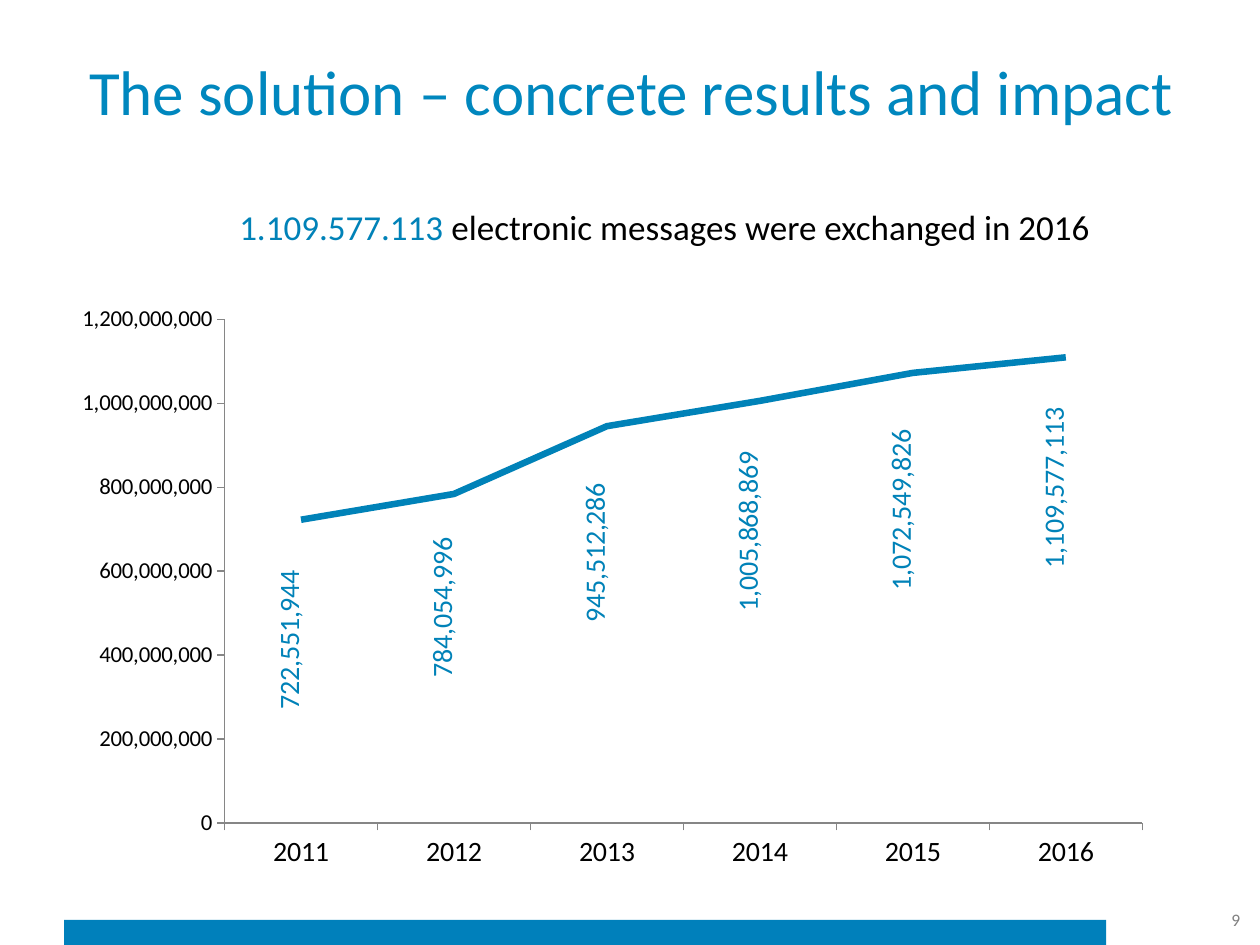
from lxml import etree
from pptx import Presentation
from pptx.chart.data import CategoryChartData
from pptx.dml.color import RGBColor
from pptx.enum.chart import XL_CHART_TYPE, XL_LABEL_POSITION, XL_TICK_MARK
from pptx.enum.shapes import MSO_SHAPE
from pptx.enum.text import MSO_ANCHOR, PP_ALIGN
from pptx.oxml import parse_xml
from pptx.oxml.ns import nsdecls, qn
from pptx.util import Inches, Pt

FONT = "Calibri"
BAR_BLUE = RGBColor(0x00, 0x80, 0xBB)
TITLE_BLUE = RGBColor(0x00, 0x87, 0xBE)
BLUE = RGBColor(0x00, 0x82, 0xB8)
BLACK = RGBColor(0x00, 0x00, 0x00)
GRAY = RGBColor(0x80, 0x80, 0x80)
AXIS_GRAY = RGBColor(0x86, 0x86, 0x86)
LINE_STACKED = XL_CHART_TYPE.LINE_STACKED
BELOW = XL_LABEL_POSITION.BELOW
OUTSIDE = XL_TICK_MARK.OUTSIDE
NO_TICK = XL_TICK_MARK.NONE
RECTANGLE = MSO_SHAPE.RECTANGLE
MIDDLE = MSO_ANCHOR.MIDDLE
CENTER = PP_ALIGN.CENTER
RIGHT = PP_ALIGN.RIGHT

MESSAGES = {
    "2011": 722551944,
    "2012": 784054996,
    "2013": 945512286,
    "2014": 1005868869,
    "2015": 1072549826,
    "2016": 1109577113,
}
LABEL_DROPS = [0.07, 0.06, 0.08, 0.07, 0.08, 0.07]


def set_font(font, size, color):
    font.name = FONT
    font.size = Pt(size)
    font.color.rgb = color


def manual_layout(**settings):
    layout = parse_xml(f"<c:layout {nsdecls('c')}><c:manualLayout/></c:layout>")
    for name, value in settings.items():
        etree.SubElement(layout[0], qn(f"c:{name}")).set("val", str(value))
    return layout


presentation = Presentation()
presentation.slide_width = Inches(10)
presentation.slide_height = Inches(7.5)
slide = presentation.slides.add_slide(presentation.slide_layouts[5])

bar = slide.shapes.add_shape(
    RECTANGLE, Inches(0.51), Inches(7.3), Inches(8.27), Inches(0.2))
bar.shadow.inherit = False
bar.fill.solid()
bar.fill.fore_color.rgb = BAR_BLUE
bar.line.fill.background()

title = slide.shapes.title
title.left, title.top = Inches(0.51), Inches(0.21)
title.width, title.height = Inches(9), Inches(1.01)
title.text_frame.text = "The solution – concrete results and impact"
title.text_frame.vertical_anchor = MIDDLE
title.text_frame.word_wrap = True
paragraph = title.text_frame.paragraphs[0]
paragraph.alignment = CENTER
set_font(paragraph.font, 36, TITLE_BLUE)

page_number = slide.shapes.add_textbox(
    Inches(9.12), Inches(7.1), Inches(0.82), Inches(0.4))
page_number.text_frame.word_wrap = True
page_number.text_frame.vertical_anchor = MIDDLE
paragraph = page_number.text_frame.paragraphs[0]
paragraph.text = "9"
paragraph.alignment = RIGHT
set_font(paragraph.font, 10, GRAY)

chart_data = CategoryChartData(number_format="#,##0")
chart_data.categories = list(MESSAGES)
chart_data.add_series("Series 1", list(MESSAGES.values()))
chart = slide.shapes.add_chart(
    LINE_STACKED, Inches(0.43), Inches(1.83), Inches(8.84), Inches(5.15),
    chart_data).chart
chart.has_legend = False
chart.has_title = False
set_font(chart.font, 16, BLACK)
chart.plots[0].vary_by_categories = False

plot_area = chart.element.find(".//" + qn("c:plotArea"))
for old_layout in plot_area.findall(qn("c:layout")):
    plot_area.remove(old_layout)
plot_area.insert(0, manual_layout(
    layoutTarget="inner", xMode="edge", yMode="edge",
    x=0.153, y=0.137, w=0.824, h=0.776))

value_axis = chart.value_axis
value_axis.minimum_scale = 0
value_axis.maximum_scale = 1_200_000_000
value_axis.major_unit = 200_000_000
value_axis.has_major_gridlines = False
value_axis.tick_labels.number_format = "#,##0"
value_axis.tick_labels.number_format_is_linked = False
set_font(value_axis.tick_labels.font, 13, BLACK)
set_font(chart.category_axis.tick_labels.font, 16, BLACK)
for axis in (value_axis, chart.category_axis):
    axis.major_tick_mark = OUTSIDE
    axis.minor_tick_mark = NO_TICK
    axis.format.line.color.rgb = AXIS_GRAY
    axis.format.line.width = Pt(0.75)

series = chart.plots[0].series[0]
series.smooth = False
series.format.line.color.rgb = BLUE
series.format.line.width = Pt(3.75)
for index in range(len(MESSAGES)):
    label = series.points[index].data_label
    set_font(label.font, 16, BLUE)
    label.position = BELOW
for label_element, drop in zip(chart.element.iter(qn("c:dLbl")), LABEL_DROPS):
    label_element.find(qn("c:idx")).addnext(manual_layout(x=-0.01, y=drop))
    body = label_element.find(".//" + qn("a:bodyPr"))
    body.set("rot", "-5400000")
    body.set("vert", "horz")
for leader_lines in chart.element.iter(qn("c:showLeaderLines")):
    leader_lines.set("val", "0")

headline = slide.shapes.add_textbox(
    Inches(1.77), Inches(1.58), Inches(7.01), Inches(0.44))
headline.text_frame.word_wrap = True
paragraph = headline.text_frame.paragraphs[0]
paragraph.alignment = CENTER
for text, color in (
        ("1.109.577.113 ", BLUE),
        ("electronic messages were exchanged in 2016", BLACK)):
    run = paragraph.add_run()
    run.text = text
    set_font(run.font, 20, color)

presentation.save("out.pptx")
